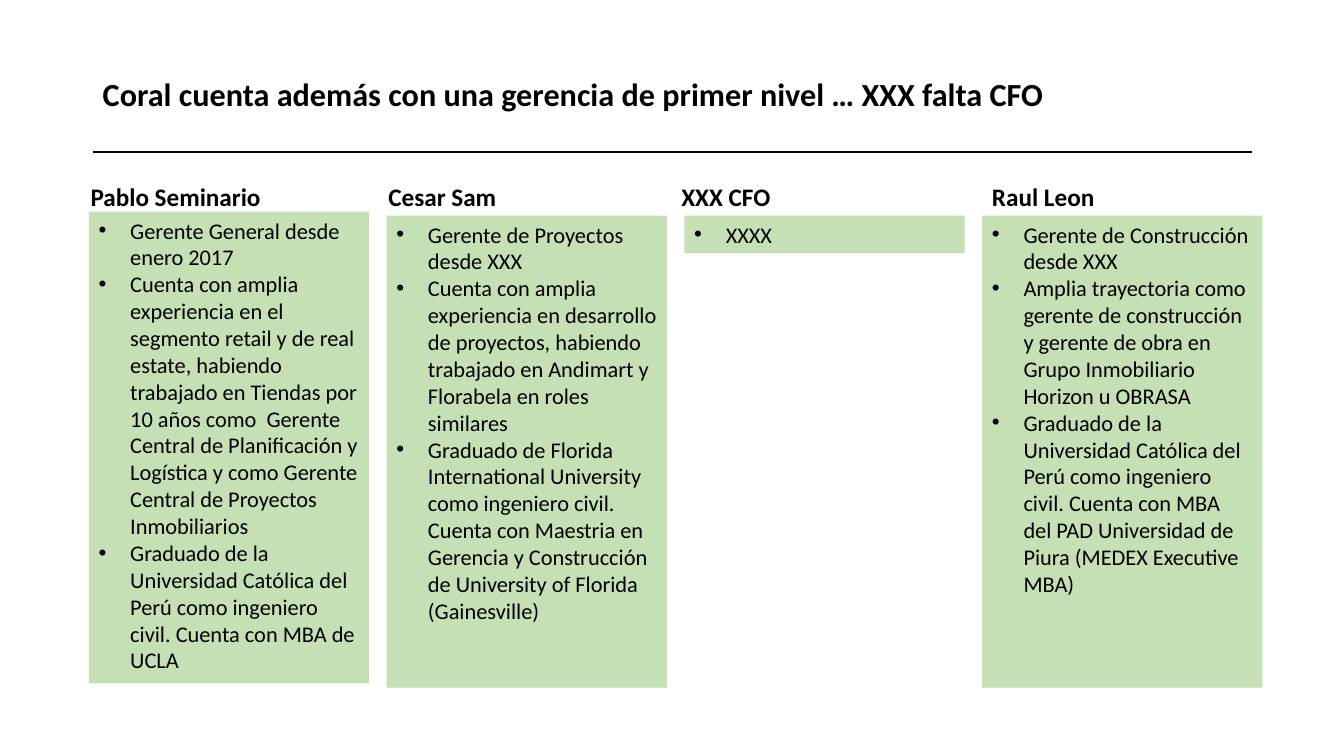
"""Builds the slide that presents the first-level management team."""
from dataclasses import dataclass

from lxml import etree
from pptx import Presentation
from pptx.dml.color import RGBColor
from pptx.enum.shapes import MSO_CONNECTOR, MSO_SHAPE
from pptx.enum.text import MSO_ANCHOR, MSO_AUTO_SIZE, PP_ALIGN
from pptx.oxml.ns import qn
from pptx.util import Pt

RECTANGLE = MSO_SHAPE.RECTANGLE
STRAIGHT = MSO_CONNECTOR.STRAIGHT
TOP, MIDDLE = MSO_ANCHOR.TOP, MSO_ANCHOR.MIDDLE
GROW, FIXED = MSO_AUTO_SIZE.SHAPE_TO_FIT_TEXT, MSO_AUTO_SIZE.NONE
LEFT = PP_ALIGN.LEFT

HEADLINE = "Coral cuenta además con una gerencia de primer nivel … XXX falta CFO"
MANAGERS = [
    {
        "name": "Pablo Seminario", "name_shift": -5.8, "top": 151.2, "height": 337,
        "profile": [
            "Gerente General desde enero 2017",
            "Cuenta con amplia experiencia en el segmento retail y de real estate, "
            "habiendo trabajado en Tiendas por 10 años como  Gerente Central de "
            "Planificación y Logística y como Gerente Central de Proyectos Inmobiliarios",
            "Graduado de la Universidad Católica del Perú como ingeniero civil. "
            "Cuenta con MBA de UCLA",
        ],
    },
    {
        "name": "Cesar Sam", "name_shift": -5.8, "top": 154.1, "height": 337,
        "profile": [
            "Gerente de Proyectos desde XXX",
            "Cuenta con amplia experiencia en desarrollo de proyectos, habiendo "
            "trabajado en Andimart y Florabela en roles similares",
            "Graduado de Florida International University como ingeniero civil. "
            "Cuenta con Maestria en Gerencia y Construcción de University of Florida "
            "(Gainesville)",
        ],
    },
    {
        "name": "XXX CFO", "name_shift": -9.2, "top": 154.1, "height": 26.7,
        "profile": ["XXXX"],
    },
    {
        "name": "Raul Leon", "name_shift": 0, "top": 154.1, "height": 337,
        "profile": [
            "Gerente de Construcción desde XXX",
            "Amplia trayectoria como gerente de construcción y gerente de obra en "
            "Grupo Inmobiliario Horizon u OBRASA",
            "Graduado de la Universidad Católica del Perú como ingeniero civil. "
            "Cuenta con MBA del PAD Universidad de Piura (MEDEX Executive MBA)",
        ],
    },
]


@dataclass(frozen=True)
class Theme:
    """Colours, font and type sizes of the slide."""
    ink: RGBColor = RGBColor(0x00, 0x00, 0x00)
    panel: RGBColor = RGBColor(0xC5, 0xE0, 0xB4)
    font: str = "Calibri"
    headline: float = 23
    name: float = 18
    profile: float = 16


THEME = Theme()
SLIDE_WIDTH, SLIDE_HEIGHT = 960, 540
MARGIN, CONTENT_WIDTH = 66.2, 828
HEADLINE_TOP, HEADLINE_HEIGHT, RULE_TOP = 28.8, 79.2, 108.7
FIRST_COLUMN, COLUMN_STEP, COLUMN_WIDTH = 63.4, 212.7, 200.2
NAME_TOP, NAME_WIDTH, NAME_HEIGHT = 126, 271.4, 29.1
BULLET_INDENT = 22.5


def style(paragraph, size, bold=False):
    """Formats the runs of a left-aligned paragraph."""
    paragraph.alignment = LEFT
    for run in paragraph.runs:
        run.font.name = THEME.font
        run.font.size = Pt(size)
        run.font.bold = bold
        run.font.color.rgb = THEME.ink


def add_bullet(paragraph):
    """Gives a paragraph a hanging round bullet."""
    properties = paragraph._p.get_or_add_pPr()
    properties.set("marL", str(Pt(BULLET_INDENT)))
    properties.set("indent", str(-Pt(BULLET_INDENT)))
    etree.SubElement(properties, qn("a:buFont")).set("typeface", "Arial")
    etree.SubElement(properties, qn("a:buChar")).set("char", "•")


def add_headline(slide):
    """Fills the title placeholder and draws the rule below it."""
    title = slide.shapes.title
    title.left, title.top = Pt(MARGIN), Pt(HEADLINE_TOP)
    title.width, title.height = Pt(CONTENT_WIDTH), Pt(HEADLINE_HEIGHT)
    frame = title.text_frame
    frame.text = HEADLINE
    frame.word_wrap = True
    frame.auto_size = FIXED
    frame.vertical_anchor = MIDDLE
    frame.paragraphs[0].line_spacing = 0.9
    style(frame.paragraphs[0], THEME.headline, bold=True)

    rule = slide.shapes.add_connector(
        STRAIGHT, Pt(MARGIN), Pt(RULE_TOP), Pt(MARGIN + CONTENT_WIDTH), Pt(RULE_TOP))
    rule.line.color.rgb = THEME.ink
    rule.line.width = Pt(1.5)
    etree.SubElement(rule._element.spPr, qn("a:effectLst"))


def add_profile(slide, manager, left):
    """Draws the panel with the bulleted profile of a manager."""
    panel = slide.shapes.add_shape(
        RECTANGLE, Pt(left), Pt(manager["top"]), Pt(COLUMN_WIDTH), Pt(manager["height"]))
    panel.shadow.inherit = False
    panel.fill.solid()
    panel.fill.fore_color.rgb = THEME.panel
    panel.line.fill.background()
    frame = panel.text_frame
    frame.text = "\n".join(manager["profile"])
    frame.word_wrap = True
    frame.auto_size = GROW
    frame.vertical_anchor = TOP
    for paragraph in frame.paragraphs:
        add_bullet(paragraph)
        style(paragraph, THEME.profile)


def add_name(slide, manager, column_left):
    """Writes the name of a manager above the panel."""
    left = column_left + manager["name_shift"]
    width = min(NAME_WIDTH, SLIDE_WIDTH - left)
    label = slide.shapes.add_textbox(Pt(left), Pt(NAME_TOP), Pt(width), Pt(NAME_HEIGHT))
    frame = label.text_frame
    frame.text = manager["name"]
    frame.word_wrap = True
    frame.auto_size = GROW
    style(frame.paragraphs[0], THEME.name, bold=True)


def main():
    """Builds and saves the presentation."""
    deck = Presentation()
    deck.slide_width, deck.slide_height = Pt(SLIDE_WIDTH), Pt(SLIDE_HEIGHT)
    slide = deck.slides.add_slide(deck.slide_layouts.get_by_name("Title Only"))
    add_headline(slide)
    for column, manager in enumerate(MANAGERS):
        left = FIRST_COLUMN + column * COLUMN_STEP
        add_profile(slide, manager, left)
        add_name(slide, manager, left)
    deck.save("out.pptx")


if __name__ == "__main__":
    main()
